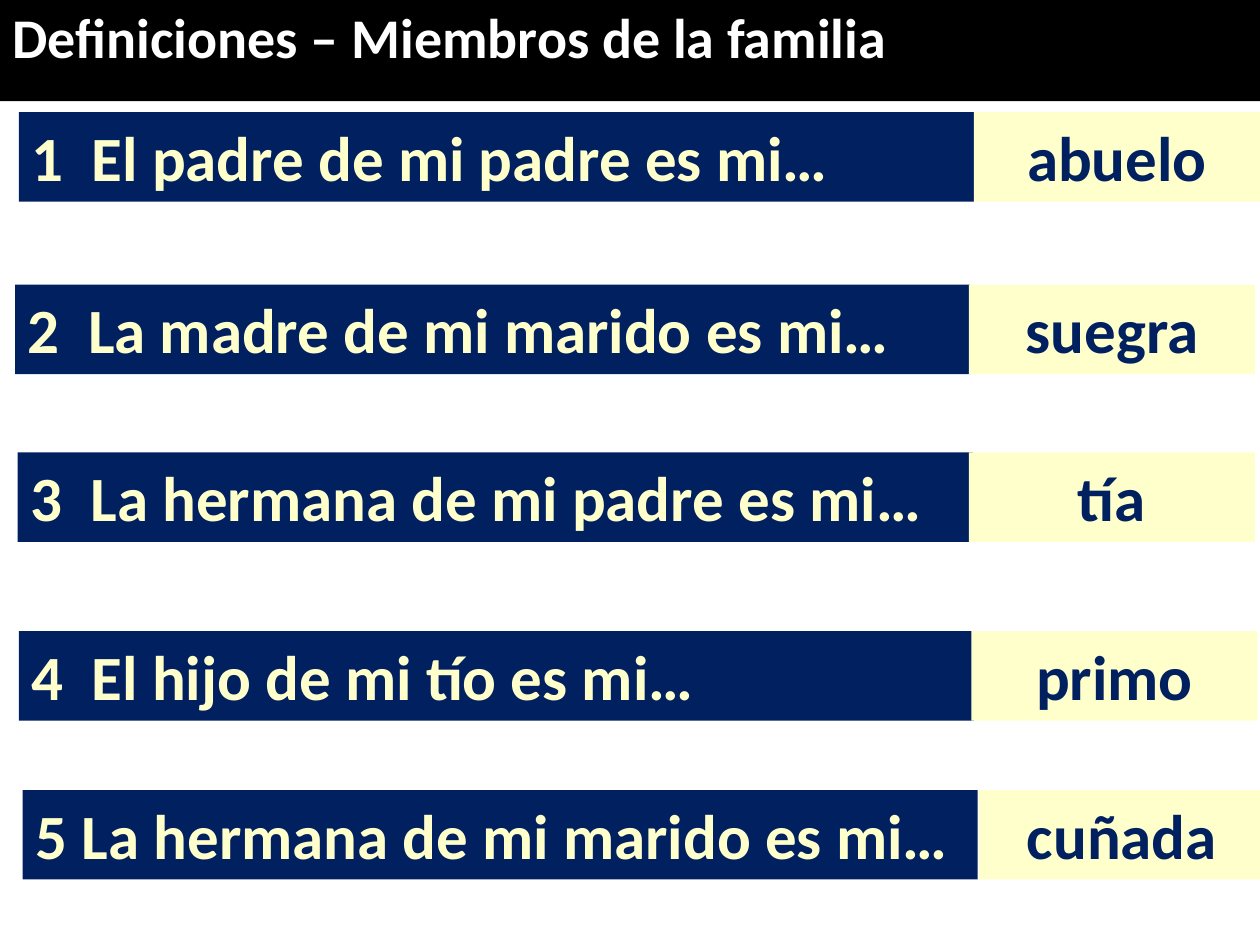
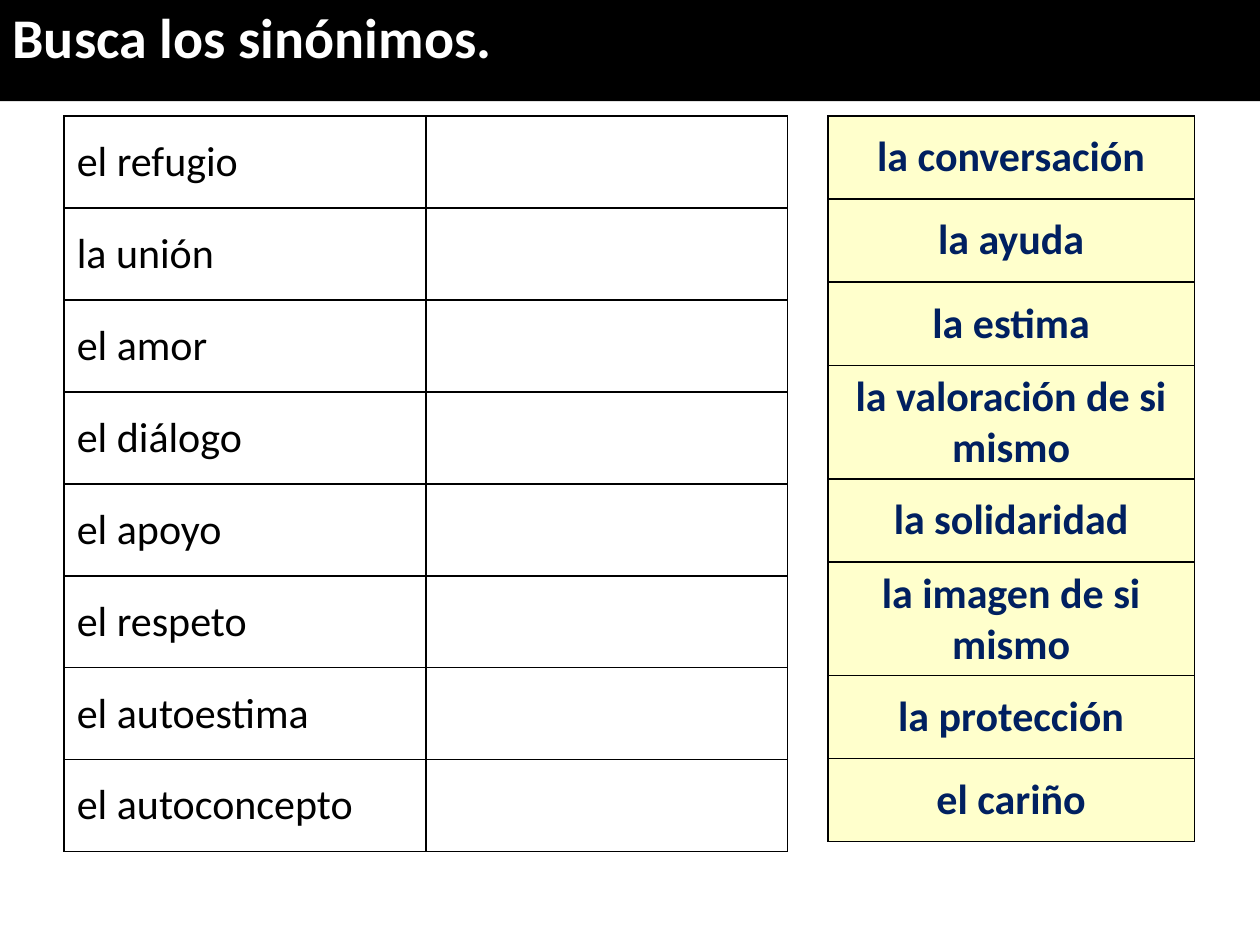
from pptx import Presentation
from pptx.dml.color import RGBColor
from pptx.enum.text import MSO_ANCHOR as Anchor, MSO_AUTO_SIZE as AutoSize, PP_ALIGN as Align
from pptx.oxml.ns import qn
from pptx.util import Inches, Pt
from lxml.etree import SubElement

FONT = "Calibri"
COLORS = {"black": "000000", "white": "FFFFFF", "navy": "002060", "cream": "FFFFCC"}
TITLE_ONLY = 5

QUESTION_WIDTH, ANSWER_WIDTH, BAND_HEIGHT = 7.58, 2.27, 0.71
WIDE_GAP, NARROW_GAP = 0.48, 0.37
# question, answer, question left, answer left, top, indent after the number
DEFINITIONS = [
    ("El padre de mi padre es mi…", "abuelo", 0.15, 7.73, 0.89, WIDE_GAP),
    ("La madre de mi marido es mi…", "suegra", 0.12, 7.69, 2.26, WIDE_GAP),
    ("La hermana de mi padre es mi…", "tía", 0.14, 7.69, 3.59, WIDE_GAP),
    ("El hijo de mi tío es mi…", "primo", 0.15, 7.71, 5.01, WIDE_GAP),
    ("La hermana de mi marido es mi…", "cuñada", 0.18, 7.77, 6.27, NARROW_GAP),
]
WORDS = ["el refugio", "la unión", "el amor", "el diálogo",
         "el apoyo", "el respeto", "el autoestima", "el autoconcepto"]
SYNONYMS = ["la conversación", "la ayuda", "la estima", "la valoración de si mismo",
            "la solidaridad", "la imagen de si mismo", "la protección", "el cariño"]


def rgb(name):
    return RGBColor.from_string(COLORS[name])


def write(text_frame, text, size=36, color="black", bold=True, align=Align.LEFT, hanging=0):
    """Fill the first paragraph; hanging is the indent in inches behind a leading number."""
    paragraph = text_frame.paragraphs[0]
    paragraph.alignment = align
    if hanging:
        properties = paragraph._p.get_or_add_pPr()
        properties.set("marL", str(Inches(hanging)))
        properties.set("indent", str(-Inches(hanging)))
    run = paragraph.add_run()
    run.text = text
    font = run.font
    font.name, font.size, font.bold = FONT, Pt(size), bold
    font.color.rgb = rgb(color)


def format_band(shape, fill, text, **text_format):
    shape.fill.solid()
    shape.fill.fore_color.rgb = rgb(fill)
    frame = shape.text_frame
    frame.word_wrap = True
    frame.auto_size = AutoSize.SHAPE_TO_FIT_TEXT
    frame.vertical_anchor = Anchor.TOP
    write(frame, text, **text_format)


def add_titled_slide(presentation, text):
    slide = presentation.slides.add_slide(presentation.slide_layouts[TITLE_ONLY])
    title = slide.shapes.title
    title.left, title.top = Inches(0), Inches(-0.03)
    title.width, title.height = presentation.slide_width, Inches(0.64)
    format_band(title, "black", text, size=32, color="white")
    return slide


def add_band(slide, left, top, width, fill, text, **text_format):
    band = slide.shapes.add_textbox(
        Inches(left), Inches(top), Inches(width), Inches(BAND_HEIGHT))
    format_band(band, fill, text, **text_format)


def add_borders(cell):
    properties = cell._tc.get_or_add_tcPr()
    for position, side in enumerate(("lnL", "lnR", "lnT", "lnB")):
        line = SubElement(properties, qn(f"a:{side}"), w=str(Pt(1)))
        fill = SubElement(line, qn("a:solidFill"))
        SubElement(fill, qn("a:srgbClr"), val=COLORS["black"])
        properties.insert(position, line)


def add_word_table(slide, words, left, top, column_widths, row_height, fill=None, **text_format):
    """List the words in the first column; further columns stay blank for answers."""
    frame = slide.shapes.add_table(
        len(words), len(column_widths), Inches(left), Inches(top),
        Inches(sum(column_widths)), Inches(row_height * len(words)))
    table = frame.table
    table.first_row = table.horz_banding = False
    for column, width in zip(table.columns, column_widths):
        column.width = Inches(width)
    for row, word in zip(table.rows, words):
        row.height = Inches(row_height)
        for cell in row.cells:
            cell.vertical_anchor = Anchor.MIDDLE
            if fill:
                cell.fill.solid()
                cell.fill.fore_color.rgb = rgb(fill)
            else:
                cell.fill.background()
            add_borders(cell)
        write(row.cells[0].text_frame, word, size=24, **text_format)


def build_definitions(presentation):
    slide = add_titled_slide(presentation, "Definiciones – Miembros de la familia")
    for number, definition in enumerate(DEFINITIONS, start=1):
        question, answer, question_left, answer_left, top, gap = definition
        add_band(slide, question_left, top, QUESTION_WIDTH, "navy",
                 f"{number}\t{question}", color="cream", hanging=gap)
        add_band(slide, answer_left, top, ANSWER_WIDTH, "cream",
                 answer, color="navy", align=Align.CENTER)


def build_synonyms(presentation):
    slide = add_titled_slide(presentation, "Busca los sinónimos.")
    add_word_table(slide, WORDS, 0.51, 0.92, [2.87, 2.87], 0.73, bold=False)
    add_word_table(slide, SYNONYMS, 6.57, 0.92, [2.91], 0.66, fill="cream",
                   color="navy", align=Align.CENTER)


def main():
    presentation = Presentation()
    presentation.slide_width, presentation.slide_height = Inches(10), Inches(7.5)
    build_definitions(presentation)
    build_synonyms(presentation)
    presentation.save("out.pptx")


if __name__ == "__main__":
    main()
